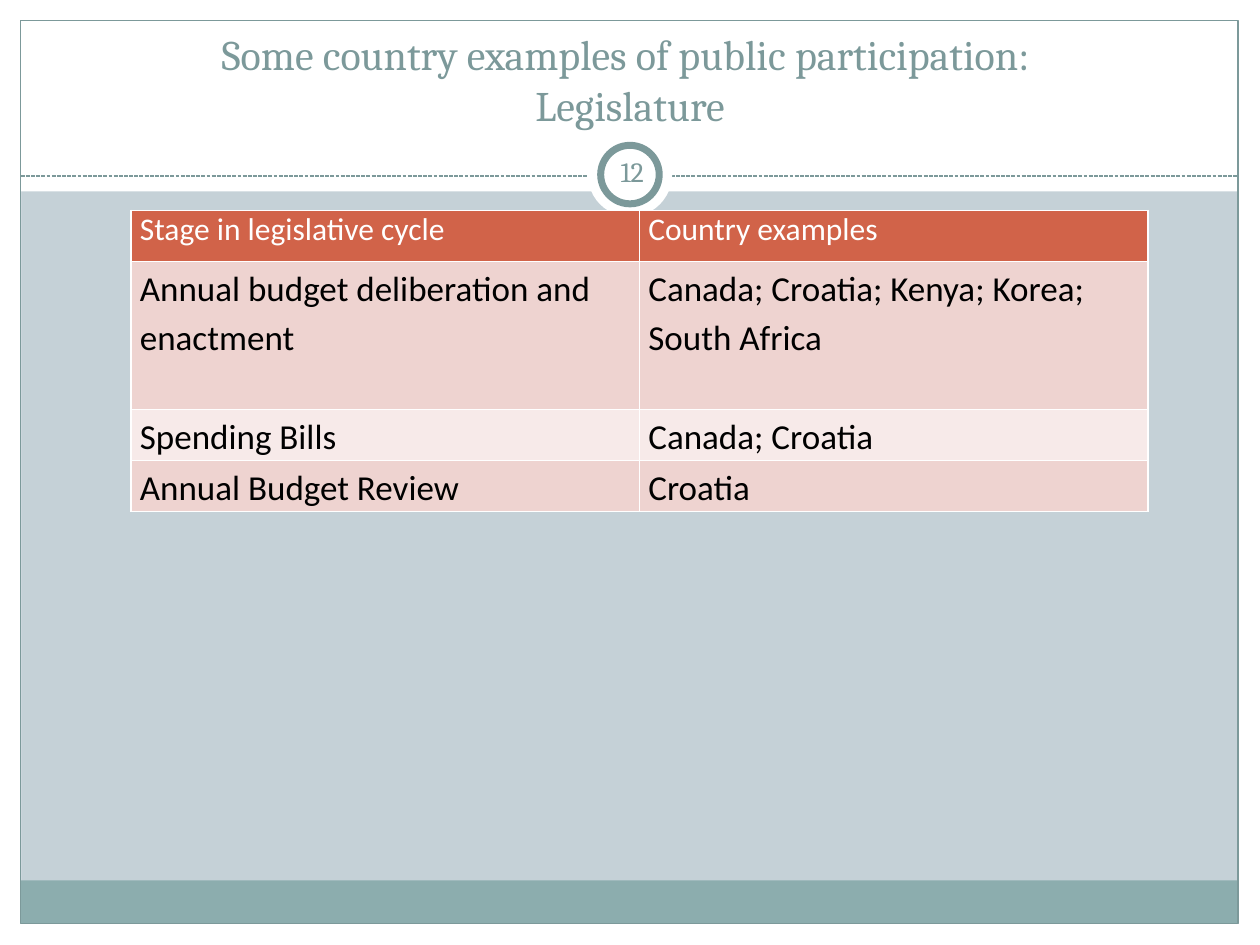
from lxml.etree import SubElement
from pptx import Presentation
from pptx.dml.color import RGBColor
from pptx.enum.dml import MSO_LINE
from pptx.enum.shapes import MSO_CONNECTOR, MSO_SHAPE
from pptx.enum.text import MSO_ANCHOR as ANCHOR, PP_ALIGN as ALIGN
from pptx.oxml.ns import qn
from pptx.util import Cm, Pt

WHITE, TEAL, BLACK = "FFFFFF", "7C999A", "000000"


def paint(color_format, hex_color):
    color_format.rgb = RGBColor.from_string(hex_color)


def write(frame, text, size, color, font="Calibri", align=ALIGN.LEFT,
          anchor=ANCHOR.TOP, spacing=None, margins=(0.18, 0)):
    frame.word_wrap = True
    frame.vertical_anchor = anchor
    frame.margin_left = frame.margin_right = Cm(margins[0])
    frame.margin_top = frame.margin_bottom = Cm(margins[1])
    frame.text = text
    for paragraph in frame.paragraphs:
        paragraph.alignment = align
        if spacing:
            paragraph.line_spacing = spacing
        for run in paragraph.runs:
            run.font.size = Pt(size)
            run.font.name = font
            paint(run.font.color, color)


deck = Presentation()
deck.slide_width, deck.slide_height = Cm(25.4), Cm(19.05)
slide = deck.slides.add_slide(deck.slide_layouts[6])
slide.background.fill.solid()
paint(slide.background.fill.fore_color, "C5D1D7")
shapes = slide.shapes

# White margins, footer band, frame, then the badge over the dashed rule
RECT, OVAL = MSO_SHAPE.RECTANGLE, MSO_SHAPE.OVAL
decor = [
    (RECT, 0, 18.62, 25.4, 0.43, WHITE, None),
    (RECT, 0, 0, 25.4, 3.86, WHITE, None),
    (RECT, 0, 0, 0.43, 19.05, WHITE, None),
    (RECT, 24.97, 0, 0.43, 19.05, WHITE, None),
    (RECT, 0.42, 17.75, 24.54, 0.87, "8CADAE", None),
    (RECT, 0.42, 0.42, 24.54, 18.2, None, 0.75),
    ("rule",),
    (OVAL, 11.85, 2.67, 1.7, 1.7, WHITE, None),
    (OVAL, 12.11, 2.93, 1.18, 1.18, WHITE, 4),
]
for kind, *details in decor:
    if kind == "rule":
        rule = shapes.add_connector(MSO_CONNECTOR.STRAIGHT,
                                    Cm(0.42), Cm(3.55), Cm(24.96), Cm(3.55))
        paint(rule.line.color, TEAL)
        rule.line.width = Pt(0.75)
        rule.line.dash_style = MSO_LINE.SQUARE_DOT
        SubElement(rule.line._get_or_add_ln().getparent(), qn("a:effectLst"))
        continue
    *box, fill, outline = details
    part = shapes.add_shape(kind, *map(Cm, box))
    part.shadow.inherit = False
    if fill:
        part.fill.solid()
        paint(part.fill.fore_color, fill)
    else:
        part.fill.background()
    if outline:
        paint(part.line.color, TEAL)
        part.line.width = Pt(outline)
    else:
        part.line.fill.background()

# Title
title = shapes.add_textbox(Cm(0.85), Cm(0.64), Cm(23.7), Cm(2.1))
write(title.text_frame,
      "Some country examples of public participation: \vLegislature",
      24, TEAL, font="Cambria", align=ALIGN.CENTER, anchor=ANCHOR.BOTTOM,
      margins=(0.25, 0.13))

# Table of stages and countries
rows = [
    ("Stage in legislative cycle", "Country examples"),
    ("Annual budget deliberation and enactment",
     "Canada; Croatia; Kenya; Korea;\nSouth Africa"),
    ("Spending Bills", "Canada; Croatia"),
    ("Annual Budget Review", "Croatia"),
]
heights = [1.03, 2.98, 1.03, 1.03]
row_fills = ["D16349", "EED3D0", "F7EAE9", "EED3D0"]
stages = shapes.add_table(len(rows), 2, Cm(2.64), Cm(4.24),
                          Cm(20.5), Cm(sum(heights))).table
for column in stages.columns:
    column.width = Cm(10.25)
for r, (row, height, row_fill) in enumerate(zip(rows, heights, row_fills)):
    stages.rows[r].height = Cm(height)
    for c, text in enumerate(row):
        cell = stages.cell(r, c)
        if r == 0:
            write(cell.text_frame, text, 18, WHITE)
        else:
            write(cell.text_frame, text, 20, BLACK, spacing=1.15)
        cell.margin_left = cell.margin_right = Cm(0.18)
        cell.margin_top = cell.margin_bottom = 0
        cell.vertical_anchor = ANCHOR.TOP
        # White borders go before the fill in the cell properties
        for side in ("lnL", "lnR", "lnT", "lnB"):
            border = SubElement(cell._tc.get_or_add_tcPr(), qn(f"a:{side}"),
                                w=str(Pt(1)))
            SubElement(SubElement(border, qn("a:solidFill")),
                       qn("a:srgbClr"), val=WHITE)
        cell.fill.solid()
        paint(cell.fill.fore_color, row_fill)

# Slide number in the badge
number = shapes.add_textbox(Cm(12.11), Cm(2.84), Cm(1.27), Cm(1.22))
write(number.text_frame, "12", 16, TEAL, font="Cambria", align=ALIGN.CENTER,
      anchor=ANCHOR.MIDDLE, margins=(0.13, 0.13))

deck.save("out.pptx")
